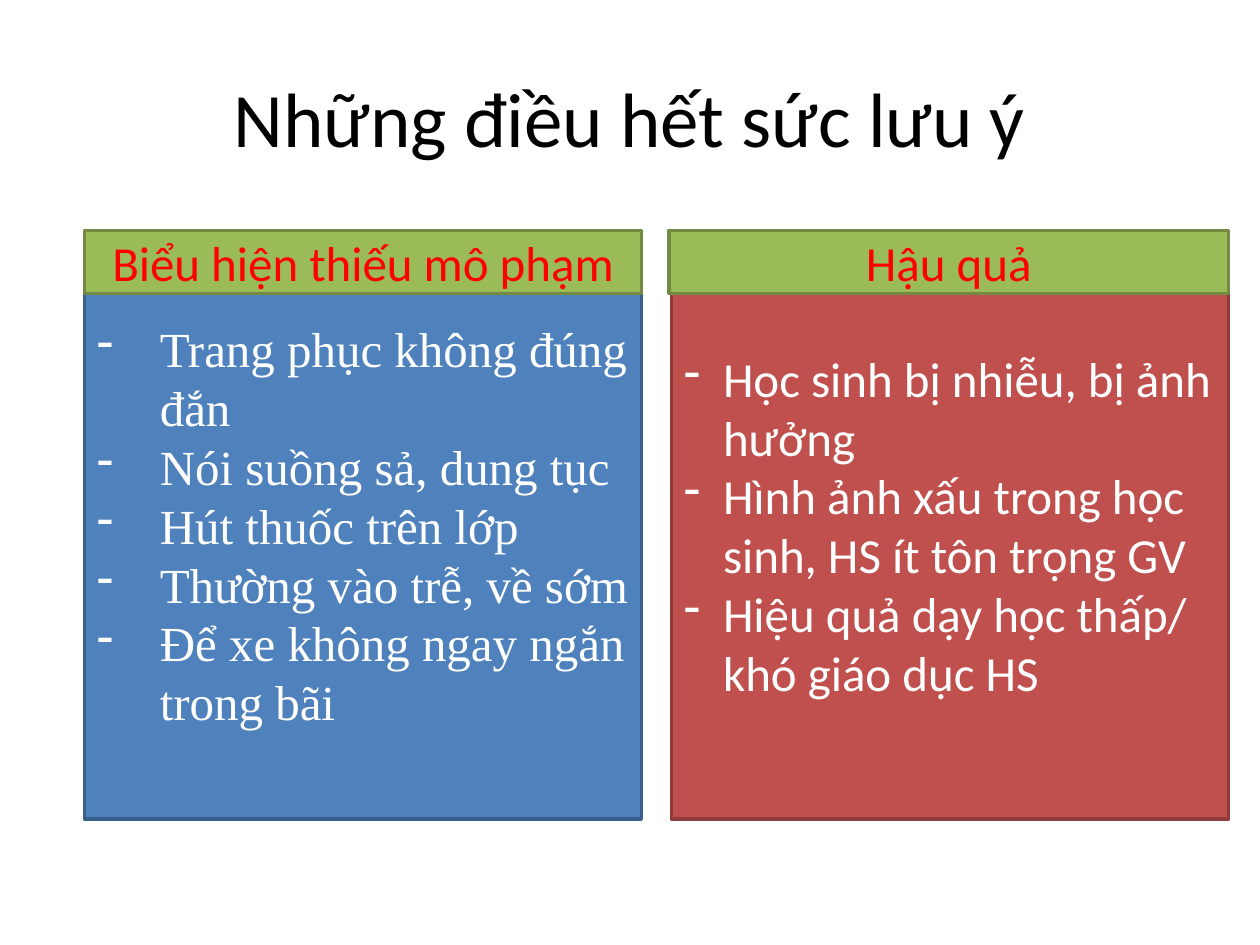
from lxml import etree
from pptx import Presentation
from pptx import util as u
from pptx.dml.color import RGBColor
from pptx.enum import shapes, text
from pptx.oxml.ns import qn

BLACK = RGBColor(0x00, 0x00, 0x00)
WHITE = RGBColor(0xFF, 0xFF, 0xFF)
RED = RGBColor(0xFF, 0x00, 0x00)
BLUE = RGBColor(0x4F, 0x81, 0xBD)
BLUE_EDGE = RGBColor(0x3A, 0x5F, 0x8C)
BRICK = RGBColor(0xC0, 0x50, 0x4D)
BRICK_EDGE = RGBColor(0x8E, 0x3B, 0x39)
GREEN = RGBColor(0x9B, 0xBB, 0x59)
GREEN_EDGE = RGBColor(0x73, 0x8A, 0x42)

TOP = 1.83
PANEL_WIDTH, PANEL_HEIGHT, HEADING_HEIGHT = 4.42, 4.67, 0.5

SIGNS = [
    "Trang phục không đúng đắn",
    "Nói suồng sả, dung tục",
    "Hút thuốc trên lớp",
    "Thường vào trễ, về sớm",
    "Để xe không ngay ngắn trong bãi",
]
CONSEQUENCES = [
    "Học sinh bị nhiễu, bị ảnh hưởng",
    "Hình ảnh xấu trong học sinh, HS ít tôn trọng GV",
    "Hiệu quả dạy học thấp/ khó giáo dục HS",
]


def set_text(shape, lines, size, color, font="Calibri", align=text.PP_ALIGN.CENTER):
    frame = shape.text_frame
    frame.word_wrap = True
    frame.vertical_anchor = text.MSO_ANCHOR.MIDDLE
    frame.text = "\n".join(lines)
    for paragraph in frame.paragraphs:
        paragraph.alignment = align
        for run in paragraph.runs:
            run.font.size = u.Pt(size)
            run.font.name = font
            run.font.color.rgb = color


def add_dash(paragraph, indent):
    properties = paragraph._p.get_or_add_pPr()
    properties.set("marL", str(u.Inches(indent)))
    properties.set("indent", str(u.Inches(-indent)))
    etree.SubElement(properties, qn("a:buFontTx"))
    etree.SubElement(properties, qn("a:buChar")).set("char", "-")


def add_title(slide, title):
    box = slide.shapes.add_textbox(u.Inches(0.5), u.Inches(0.3), u.Inches(9), u.Inches(1.25))
    set_text(box, [title], 44, BLACK)


def add_box(slide, left, width, height, fill, edge):
    box = slide.shapes.add_shape(
        shapes.MSO_SHAPE.RECTANGLE,
        u.Inches(left), u.Inches(TOP), u.Inches(width), u.Inches(height),
    )
    box.shadow.inherit = False
    box.fill.solid()
    box.fill.fore_color.rgb = fill
    box.line.color.rgb = edge
    box.line.width = u.Pt(2)
    return box


def add_panel(slide, left, fill, edge, items, font, indent):
    panel = add_box(slide, left, PANEL_WIDTH, PANEL_HEIGHT, fill, edge)
    set_text(panel, items, 28, WHITE, font, text.PP_ALIGN.LEFT)
    for paragraph in panel.text_frame.paragraphs:
        add_dash(paragraph, indent)


def add_heading(slide, left, width, heading):
    box = add_box(slide, left, width, HEADING_HEIGHT, GREEN, GREEN_EDGE)
    set_text(box, [heading], 28, RED)


def main():
    presentation = Presentation()
    presentation.slide_width = u.Inches(10)
    presentation.slide_height = u.Inches(7.5)
    slide = presentation.slides.add_slide(presentation.slide_layouts[6])
    add_title(slide, "Những điều hết sức lưu ý")
    add_panel(slide, 0.67, BLUE, BLUE_EDGE, SIGNS, "Times New Roman", 0.5)
    add_panel(slide, 5.33, BRICK, BRICK_EDGE, CONSEQUENCES, "Calibri", 0.31)
    add_heading(slide, 0.67, PANEL_WIDTH, "Biểu hiện thiếu mô phạm")
    add_heading(slide, 5.31, 4.44, "Hậu quả")
    presentation.save("out.pptx")


if __name__ == "__main__":
    main()
